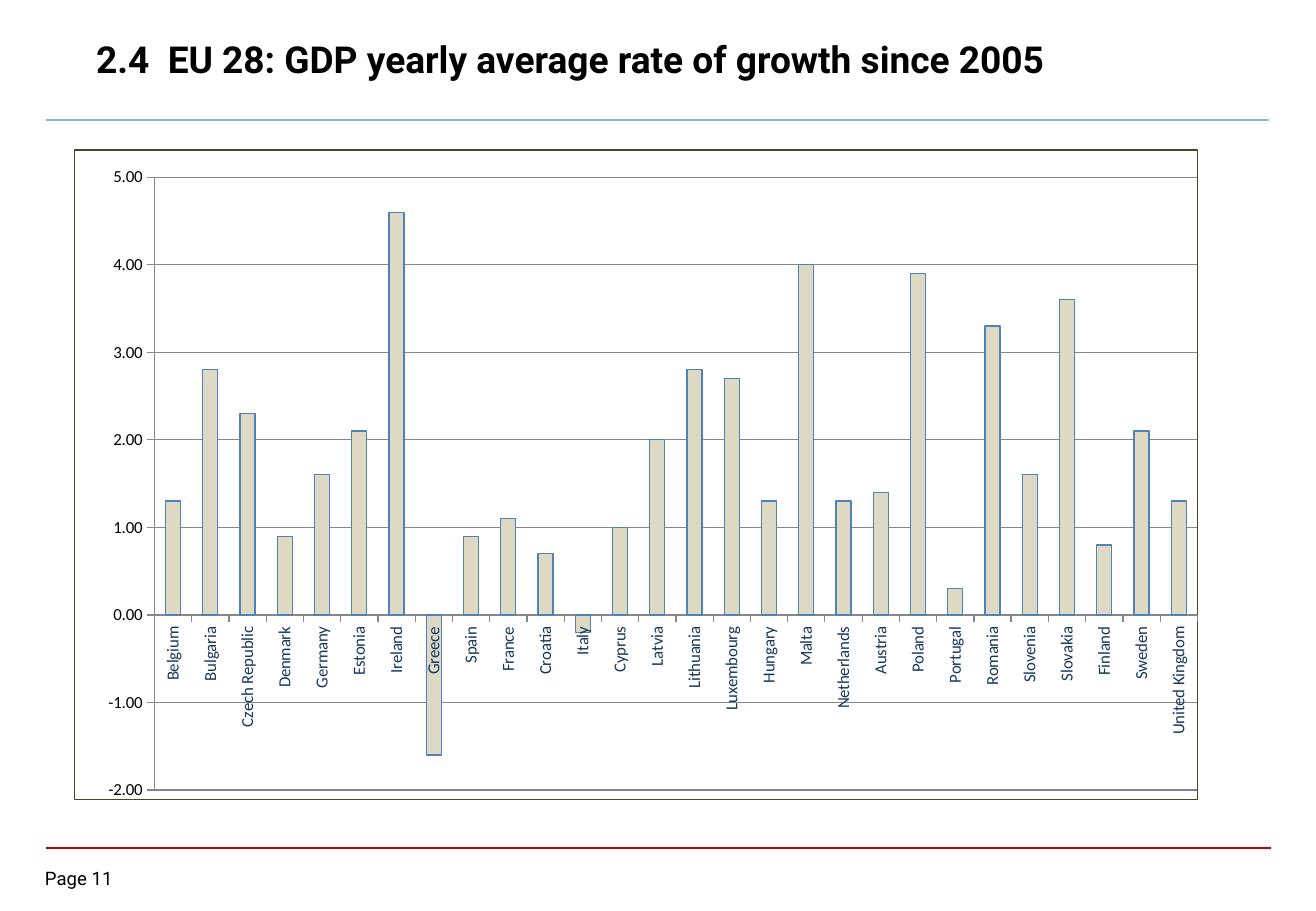
from pptx import Presentation
from pptx.chart.data import CategoryChartData
from pptx.dml.color import RGBColor
from pptx.enum.chart import XL_CHART_TYPE as ChartType, XL_TICK_MARK as TickMark
from pptx.enum.shapes import MSO_CONNECTOR as Connector
from pptx.enum.text import MSO_ANCHOR as Anchor
from pptx.oxml import parse_xml
from pptx.oxml.ns import nsdecls, qn
from pptx.util import Inches, Pt

BLACK = RGBColor(0x00, 0x00, 0x00)
RED = RGBColor(0xC0, 0x00, 0x00)
LIGHT_BLUE = RGBColor(0x8E, 0xB4, 0xE3)
NAVY = RGBColor(0x17, 0x37, 0x5E)
BAR_FILL = RGBColor(0xDD, 0xD9, 0xC3)
BAR_LINE = RGBColor(0x4F, 0x81, 0xBD)
FRAME = RGBColor(0x4A, 0x45, 0x2A)
GRID = RGBColor(0x86, 0x86, 0x86)

WIDTH, HEIGHT = 10.83, 7.5
PLOT_AREA = {"x": 0.071, "y": 0.042, "w": 0.929, "h": 0.943}
GROWTH = {
    "Belgium": 1.3, "Bulgaria": 2.8, "Czech Republic": 2.3, "Denmark": 0.9,
    "Germany": 1.6, "Estonia": 2.1, "Ireland": 4.6, "Greece": -1.6,
    "Spain": 0.9, "France": 1.1, "Croatia": 0.7, "Italy": -0.2,
    "Cyprus": 1, "Latvia": 2, "Lithuania": 2.8, "Luxembourg": 2.7,
    "Hungary": 1.3, "Malta": 4, "Netherlands": 1.3, "Austria": 1.4,
    "Poland": 3.9, "Portugal": 0.3, "Romania": 3.3, "Slovenia": 1.6,
    "Slovakia": 3.6, "Finland": 0.8, "Sweden": 2.1, "United Kingdom": 1.3,
}


class SlideBuilder:
    """Adds styled elements; lengths are percentages of the slide's size."""

    text_font = "Roboto"
    chart_font = "Calibri"

    def __init__(self, presentation):
        self.slide = presentation.slides.add_slide(presentation.slide_layouts[6])

    def box(self, left, top, width, height):
        """Turn percentages into lengths."""
        return [Inches(share * side / 100) for share, side in
                zip((left, top, width, height), (WIDTH, HEIGHT) * 2)]

    def rule(self, left, top, width, color, weight):
        x, y, length, _ = self.box(left, top, width, 0)
        line = self.slide.shapes.add_connector(Connector.STRAIGHT, x, y, x + length, y)
        line.line.color.rgb = color
        line.line.width = Pt(weight)
        line.element.spPr.append(parse_xml(f"<a:effectLst {nsdecls('a')}/>"))

    def text(self, area, words, size, bold=False, anchor=Anchor.TOP):
        frame = self.slide.shapes.add_textbox(*self.box(*area)).text_frame
        frame.word_wrap = True
        frame.vertical_anchor = anchor
        frame.margin_left = frame.margin_right = 0
        frame.margin_top = frame.margin_bottom = 0
        run = frame.paragraphs[0].add_run()
        run.text = words
        run.font.name = self.text_font
        run.font.size = Pt(size)
        run.font.bold = bold
        run.font.color.rgb = BLACK

    def column_chart(self, area, values):
        data = CategoryChartData(number_format="0.00")
        data.categories = list(values)
        data.add_series("Series 1", list(values.values()))
        chart = self.slide.shapes.add_chart(
            ChartType.COLUMN_CLUSTERED, *self.box(*area), data).chart
        chart.has_legend = chart.has_title = False
        chart.font.name = self.chart_font
        chart.font.size = Pt(10)
        chart.font.color.rgb = BLACK
        self.style_columns(chart.plots[0])
        self.style_axes(chart)
        self.place_plot(chart)
        self.frame_chart(chart)

    def style_columns(self, plot):
        plot.gap_width = 150
        plot.vary_by_categories = False
        series = plot.series[0]
        series.invert_if_negative = False
        series.format.fill.solid()
        series.format.fill.fore_color.rgb = BAR_FILL
        series.format.line.color.rgb = BAR_LINE
        series.format.line.width = Pt(0.75)

    def style_axes(self, chart):
        value_axis, category_axis = chart.value_axis, chart.category_axis
        value_axis.minimum_scale, value_axis.maximum_scale = -2, 5
        value_axis.major_unit = 1
        value_axis.has_major_gridlines = True
        value_axis.tick_labels.number_format = "0.00"
        value_axis.tick_labels.number_format_is_linked = False
        for axis in (value_axis, category_axis):
            axis.major_tick_mark = TickMark.OUTSIDE
            axis.minor_tick_mark = TickMark.NONE
        for part in (value_axis, category_axis, value_axis.major_gridlines):
            part.format.line.color.rgb = GRID
            part.format.line.width = Pt(0.75)
        labels = category_axis.tick_labels
        labels.font.name = self.chart_font
        labels.font.size = Pt(10)
        labels.font.color.rgb = NAVY
        turned = category_axis.format.line and category_axis
        body = turned.tick_labels.font and chart.element.find(
            f".//{qn('c:catAx')}/{qn('c:txPr')}/{qn('a:bodyPr')}")
        body.set("rot", "-5400000")
        body.set("vert", "horz")

    def place_plot(self, chart):
        plot_area = chart.element.find(f".//{qn('c:plotArea')}")
        for layout in plot_area.findall(qn("c:layout")):
            plot_area.remove(layout)
        modes = "".join(f'<c:{side}Mode val="edge"/>' for side in "xy")
        shares = "".join(f'<c:{side} val="{share}"/>' for side, share in PLOT_AREA.items())
        plot_area.insert(0, parse_xml(
            f'<c:layout {nsdecls("c")}><c:manualLayout><c:layoutTarget val="inner"/>'
            f'{modes}{shares}</c:manualLayout></c:layout>'))

    def frame_chart(self, chart):
        chart.element.find(qn("c:chart")).addnext(parse_xml(
            f'<c:spPr {nsdecls("c", "a")}><a:noFill/><a:ln w="{Pt(0.75)}"><a:solidFill>'
            f'<a:srgbClr val="{FRAME}"/></a:solidFill></a:ln></c:spPr>'))


def main():
    presentation = Presentation()
    presentation.slide_width = Inches(WIDTH)
    presentation.slide_height = Inches(HEIGHT)
    builder = SlideBuilder(presentation)
    builder.rule(3.5, 93.07, 93.1, RED, 1)
    builder.rule(3.5, 13.2, 92.9, LIGHT_BLUE, 1.5)
    builder.text((3.42, 95.2, 6.74, 2.93), "Page 11", 11)
    builder.text((7.3, 1.73, 76.9, 9.47),
                 "2.4  EU 28: GDP yearly average rate of growth since 2005",
                 22, bold=True, anchor=Anchor.MIDDLE)
    builder.column_chart((5.63, 16.4, 85.41, 71.47), GROWTH)
    presentation.save("out.pptx")


if __name__ == "__main__":
    main()
